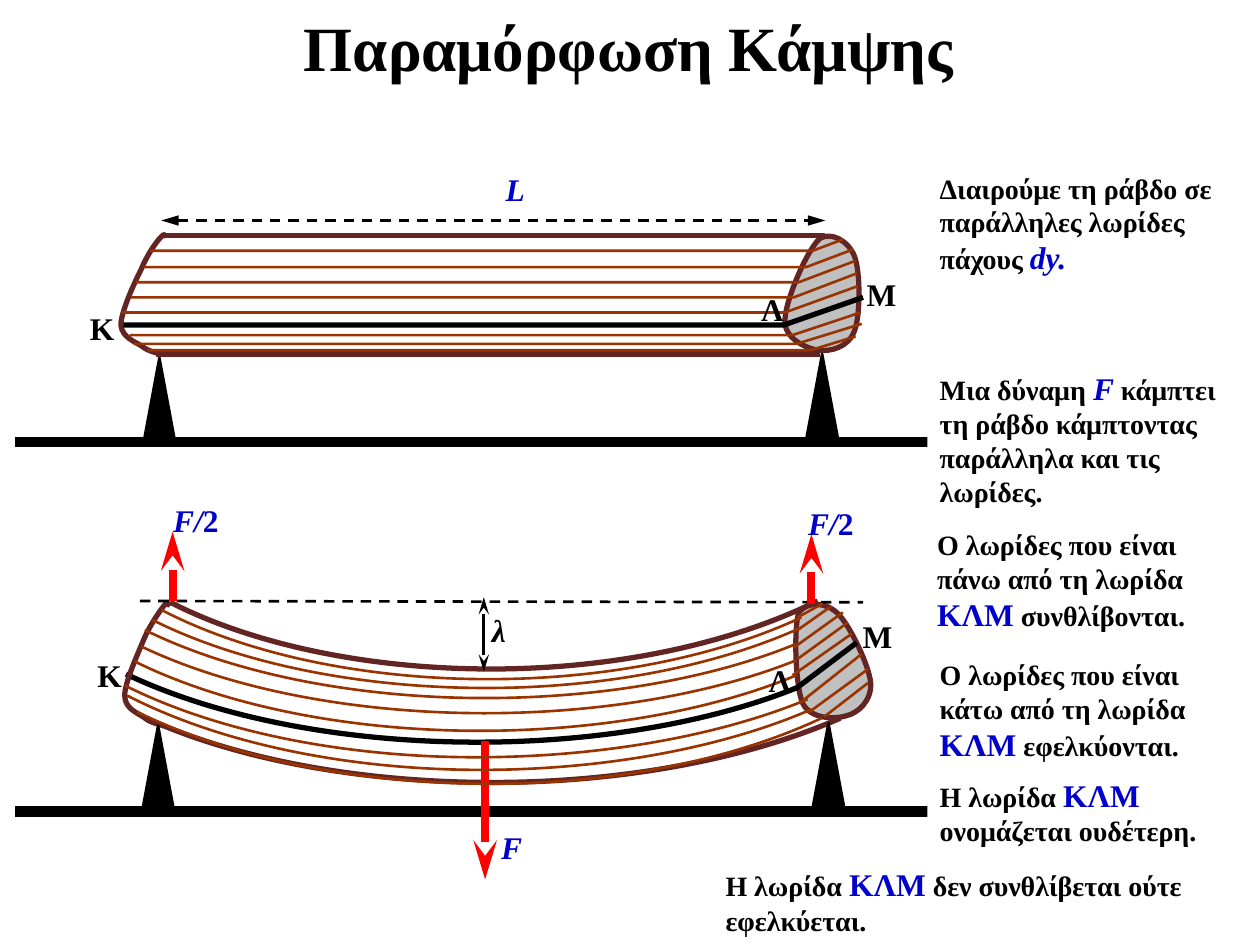
from lxml import etree
from pptx import Presentation
from pptx.dml.color import RGBColor
from pptx.enum.dml import MSO_LINE
from pptx.enum.shapes import MSO_CONNECTOR, MSO_SHAPE
from pptx.enum.text import MSO_ANCHOR, MSO_AUTO_SIZE, PP_ALIGN
from pptx.oxml.ns import qn
from pptx.util import Inches, Pt

DASH, STRAIGHT = MSO_LINE.DASH, MSO_CONNECTOR.STRAIGHT
TRIANGLE, RECTANGLE = MSO_SHAPE.ISOSCELES_TRIANGLE, MSO_SHAPE.RECTANGLE
TOP, MIDDLE, GROW = MSO_ANCHOR.TOP, MSO_ANCHOR.MIDDLE, MSO_AUTO_SIZE.SHAPE_TO_FIT_TEXT
LEFT, CENTER = PP_ALIGN.LEFT, PP_ALIGN.CENTER
BLACK, WHITE = RGBColor(0, 0, 0), RGBColor(255, 255, 255)
BLUE, RED = RGBColor(0, 0, 0xCC), RGBColor(255, 0, 0)
MAROON, RUST = RGBColor(0x63, 0x25, 0x23), RGBColor(0x99, 0x33, 0)
GREY = RGBColor(0xC0, 0xC0, 0xC0)
FONT = "Times New Roman"

# Run styles: size, colour, italic
TITLE, BODY, KEY = (36, BLACK, False), (16, BLACK, False), (18, BLUE, False)
SYMBOL, POINT, DEFLECTION = (18, BLUE, True), (18, BLACK, False), (18, BLACK, True)
KLM = ("ΚΛΜ", KEY)

# Captions: left, top, width, height, white background, runs
CAPTIONS = [
    (7.36, 1.31, 2.44, 0.94, False, [("Διαιρούμε τη ράβδο σε παράλληλες λωρίδες πάχους ", BODY),
                                     ("dy.", SYMBOL)]),
    (7.36, 2.88, 2.44, 1.21, True, [("Μια δύναμη ", BODY), ("F", SYMBOL),
                                    (" κάμπτει τη ράβδο κάμπτοντας παράλληλα και τις λωρίδες.",
                                     BODY)]),
    (7.34, 4.14, 2.36, 0.94, False, [("Ο λωρίδες που είναι πάνω από τη λωρίδα ", BODY), KLM,
                                     (" συνθλίβονται.", BODY)]),
    (7.36, 5.17, 2.36, 0.94, False, [("Ο λωρίδες που είναι κάτω από τη λωρίδα ", BODY), KLM,
                                     (" εφελκύονται.", BODY)]),
    (7.36, 6.11, 2.36, 0.67, True, [("Η λωρίδα ", BODY), KLM, (" ονομάζεται ουδέτερη.", BODY)]),
    (5.66, 6.82, 3.99, 0.67, True, [("Η λωρίδα ", BODY), KLM,
                                    (" δεν συνθλίβεται ούτε εφελκύεται.", BODY)]),
]
HALF_FORCE = [("F/", SYMBOL), ("2", KEY)]
LABELS = [
    (3.86, 1.35, 0.46, 0.33, True, [("L", SYMBOL)]),
    (3.90, 6.57, 0.32, 0.33, False, [("F", SYMBOL)]),
    (3.90, 4.85, 0.12, 0.30, True, [("λ", DEFLECTION)]),
    (1.34, 3.98, 0.43, 0.34, False, HALF_FORCE),
    (6.38, 4.00, 0.43, 0.34, False, HALF_FORCE),
    (0.65, 2.45, 0.32, 0.34, False, [("K", POINT)]),
    (6.79, 2.18, 0.41, 0.30, False, [("M", POINT)]),
    (5.99, 2.30, 0.28, 0.34, False, [("Λ", POINT)]),
    (0.71, 5.21, 0.32, 0.34, False, [("K", POINT)]),
    (6.76, 4.90, 0.41, 0.30, False, [("M", POINT)]),
    (6.05, 5.25, 0.28, 0.34, False, [("Λ", POINT)]),
]

# Outlines: start point, then Bézier segments of two controls and an end
STRAIGHT_FACE = [(6.51, 1.89),
                 (6.41, 1.97), (6.23, 2.39), (6.23, 2.54), (6.22, 2.69), (6.41, 2.77), (6.5, 2.78),
                 (6.59, 2.79), (6.73, 2.76), (6.78, 2.63), (6.83, 2.51), (6.83, 2.15), (6.78, 2.03),
                 (6.73, 1.91), (6.6, 1.84), (6.51, 1.89)]
STRAIGHT_END = [(1.32, 1.88), (1.31, 1.88), (1.31, 1.84), (1.28, 1.88),
                (1.24, 1.92), (1.17, 2.02), (1.12, 2.14), (1.06, 2.26), (0.96, 2.48), (0.96, 2.58),
                (0.97, 2.68), (1.07, 2.71), (1.13, 2.75), (1.18, 2.79), (1.24, 2.8), (1.28, 2.81)]
BENT_FACE = [(6.34, 4.86),
             (6.3, 4.97), (6.31, 5.44), (6.37, 5.58), (6.43, 5.71), (6.63, 5.71), (6.72, 5.68),
             (6.81, 5.66), (6.92, 5.56), (6.91, 5.42), (6.9, 5.29), (6.75, 4.97), (6.65, 4.87),
             (6.56, 4.78), (6.41, 4.77), (6.34, 4.86)]
BENT_END = [(1.35, 4.81), (1.34, 4.81), (1.34, 4.76), (1.3, 4.81),
            (1.27, 4.85), (1.19, 4.96), (1.14, 5.08), (1.09, 5.2), (0.99, 5.42), (0.99, 5.52),
            (0.99, 5.63), (1.1, 5.66), (1.15, 5.7), (1.2, 5.74), (1.27, 5.75), (1.3, 5.76)]

STRIP_LENGTH = 5.26
# Straight strips: left end, then tip on the face
STRAIGHT_STRIPS = [((1.19, 1.99), (6.69, 1.9)), ((1.14, 2.12), (6.77, 1.98)),
                   ((1.08, 2.24), (6.79, 2.07)), ((1.04, 2.36), (6.8, 2.17)),
                   ((0.97, 2.48), (6.81, 2.27)), ((1.03, 2.66), (6.83, 2.48)),
                   ((1.06, 2.73), (6.84, 2.57)), ((1.17, 2.78), (6.79, 2.67))]
# Bent strips: left end, lowest point, right end, height of the arc's centre
BENT_EDGES = [((1.35, 4.78), (3.9, 5.31), (6.49, 4.77), 3.51),
              ((1.16, 5.7), (3.91, 6.21), (6.67, 5.7), 4.56)]
NEUTRAL_ARC = ((1, 5.35), (3.79, 5.89), (6.32, 5.46), 4.14)
BENT_STRIPS = [((1.28, 4.84), (3.88, 5.39), (6.36, 4.9), 3.57),
               ((1.21, 4.92), (3.86, 5.46), (6.36, 4.98), 3.64),
               ((1.15, 5), (3.85, 5.54), (6.32, 5.11), 3.75),
               ((1.12, 5.13), (3.85, 5.66), (6.32, 5.24), 3.94),
               ((1.07, 5.25), (3.81, 5.8), (6.32, 5.36), 4.02),
               ((0.99, 5.44), (3.78, 6.01), (6.41, 5.55), 4.16),
               ((1.01, 5.52), (3.82, 6.11), (6.44, 5.63), 4.19),
               ((1.09, 5.65), (3.9, 6.22), (6.52, 5.7), 4.37)]
FACE_STRIPS = [((6.33, 4.9), (6.53, 4.79)), ((6.33, 5), (6.6, 4.81)), ((6.3, 5.14), (6.69, 4.86)),
               ((6.33, 5.23), (6.73, 4.94)), ((6.29, 5.36), (6.76, 5.03)),
               ((6.36, 5.57), (6.84, 5.19)), ((6.41, 5.66), (6.89, 5.31)),
               ((6.54, 5.69), (6.89, 5.42))]

prs = Presentation()
prs.slide_width, prs.slide_height = Inches(10), Inches(7.5)
shapes = prs.slides.add_slide(prs.slide_layouts[6]).shapes


def paint(shape, fill, line=None, width=0):
    shape.shadow.inherit = False
    if fill is None:
        shape.fill.background()
    else:
        shape.fill.solid()
        shape.fill.fore_color.rgb = fill
    if line is None:
        shape.line.fill.background()
    else:
        shape.line.color.rgb, shape.line.width = line, Pt(width)


def add_text(box, runs, backed=False, align=LEFT, anchor=TOP, inset=(0.1, 0.05)):
    place = [Inches(length) for length in box]
    if backed:
        holder = shapes.add_shape(RECTANGLE, *place)
        paint(holder, WHITE)
    else:
        holder = shapes.add_textbox(*place)
    frame = holder.text_frame
    frame.word_wrap, frame.vertical_anchor = True, anchor
    frame.margin_left = frame.margin_right = Inches(inset[0])
    frame.margin_top = frame.margin_bottom = Inches(inset[1])
    paragraph = frame.paragraphs[0]
    paragraph.alignment = align
    for text, (size, color, italic) in runs:
        run = paragraph.add_run()
        run.text = text
        run.font.name, run.font.size = FONT, Pt(size)
        run.font.bold, run.font.italic = True, italic
        run.font.color.rgb = color
    return frame


def add_line(start, end, color, width, dash=None, head=None, tail=None):
    connector = shapes.add_connector(STRAIGHT, *map(Inches, start + end))
    line = connector.line
    line.color.rgb, line.width = color, Pt(width)
    if dash:
        line.dash_style = dash
    properties = line._get_or_add_ln()
    for tag, arrow in (("a:headEnd", head), ("a:tailEnd", tail)):
        if arrow:
            etree.SubElement(properties, qn(tag), type=arrow, w="med", len="lg")
    etree.SubElement(connector._element.spPr, qn("a:effectLst"))


def add_outline(points, color, width, fill=None, curved=True, center=None):
    """Draw a polyline or a Bézier chain; a center widens the frame to the arc's centre."""
    corners = [(Inches(x), Inches(y)) for x, y in points]
    if center:
        builder = shapes.build_freeform(*map(Inches, center))
        builder.move_to(*corners[0])
    else:
        builder = shapes.build_freeform(*corners[0])
    builder.add_line_segments(corners[1:], close=fill is not None)
    shape = builder.convert_to_shape()
    outline = next(shape._element.iter(qn("a:path")))
    if center:
        outline.remove(outline[0])
    if curved:
        segments = outline.findall(qn("a:lnTo"))
        for i in range(0, len(segments), 3):
            bezier = etree.Element(qn("a:cubicBezTo"))
            segments[i].addprevious(bezier)
            for segment in segments[i:i + 3]:
                bezier.append(segment[0])
                outline.remove(segment)
    paint(shape, fill, color, width)


def add_sag(left, low, right, center_y, color, width):
    """Draw a bent strip, level at its lowest point."""
    def between(end, along, down):
        return end[0] + along * (low[0] - end[0]), end[1] + down * (low[1] - end[1])
    curve = [left, between(left, 0.26, 0.64), between(left, 0.62, 1), low,
             between(right, 0.63, 1), between(right, 0.27, 0.64), right]
    add_outline(curve, color, width, center=(low[0], center_y))


def add_supports(ground, tops):
    for left, top in tops:
        support = shapes.add_shape(TRIANGLE, *map(Inches, (left, top, 0.25, 0.67)))
        paint(support, BLACK, BLACK, 1.5)
    add_line((0.12, ground), (7.68, ground), BLACK, 6)


add_text((0.5, 0.05, 8.98, 0.63), [("Παραμόρφωση Κάμψης", TITLE)], align=CENTER, anchor=MIDDLE)

# Straight beam
add_line((1.28, 1.75), (6.55, 1.75), BLACK, 1.5, DASH, "triangle", "triangle")
add_outline(STRAIGHT_FACE, MAROON, 3, GREY)
add_line((1.28, 1.87), (6.55, 1.87), MAROON, 3)
add_supports(3.51, [(1.14, 2.84), (6.4, 2.81)])
add_outline(STRAIGHT_END, MAROON, 3)
add_line((1.24, 2.81), (6.51, 2.81), MAROON, 3)
add_outline([(0.98, 2.58), (6.22, 2.58), (6.85, 2.36)], BLACK, 3, curved=False)
for (left, y), tip in STRAIGHT_STRIPS:
    add_outline([(left, y), (left + STRIP_LENGTH, y), tip], RUST, 1.5, curved=False)

# Bent beam
add_outline(BENT_FACE, MAROON, 3, GREY)
add_line((6.31, 5.47), (6.8, 5.1), BLACK, 3)
add_sag(*NEUTRAL_ARC, BLACK, 3)
for edge in BENT_EDGES:
    add_sag(*edge, MAROON, 3)
add_outline(BENT_END, MAROON, 3)
add_supports(6.44, [(1.13, 5.76), (6.45, 5.74)])
add_line((1.11, 4.77), (6.85, 4.78), BLACK, 1.5, DASH)
add_line((3.84, 5.33), (3.84, 4.74), BLACK, 1.5, head="stealth", tail="stealth")
for start, end in [((3.85, 5.88), (3.85, 6.98)), ((1.37, 4.77), (1.37, 4.22)),
                   ((6.44, 4.79), (6.44, 4.24))]:
    add_line(start, end, RED, 4.5, tail="stealth")
for strip in BENT_STRIPS:
    add_sag(*strip, RUST, 1.5)
for start, end in FACE_STRIPS:
    add_line(start, end, RUST, 1.5)

for *box, backed, runs in LABELS:
    add_text(box, runs, backed, CENTER, inset=(0, 0))
for *box, backed, runs in CAPTIONS:
    add_text(box, runs, backed).auto_size = GROW

prs.save("out.pptx")
